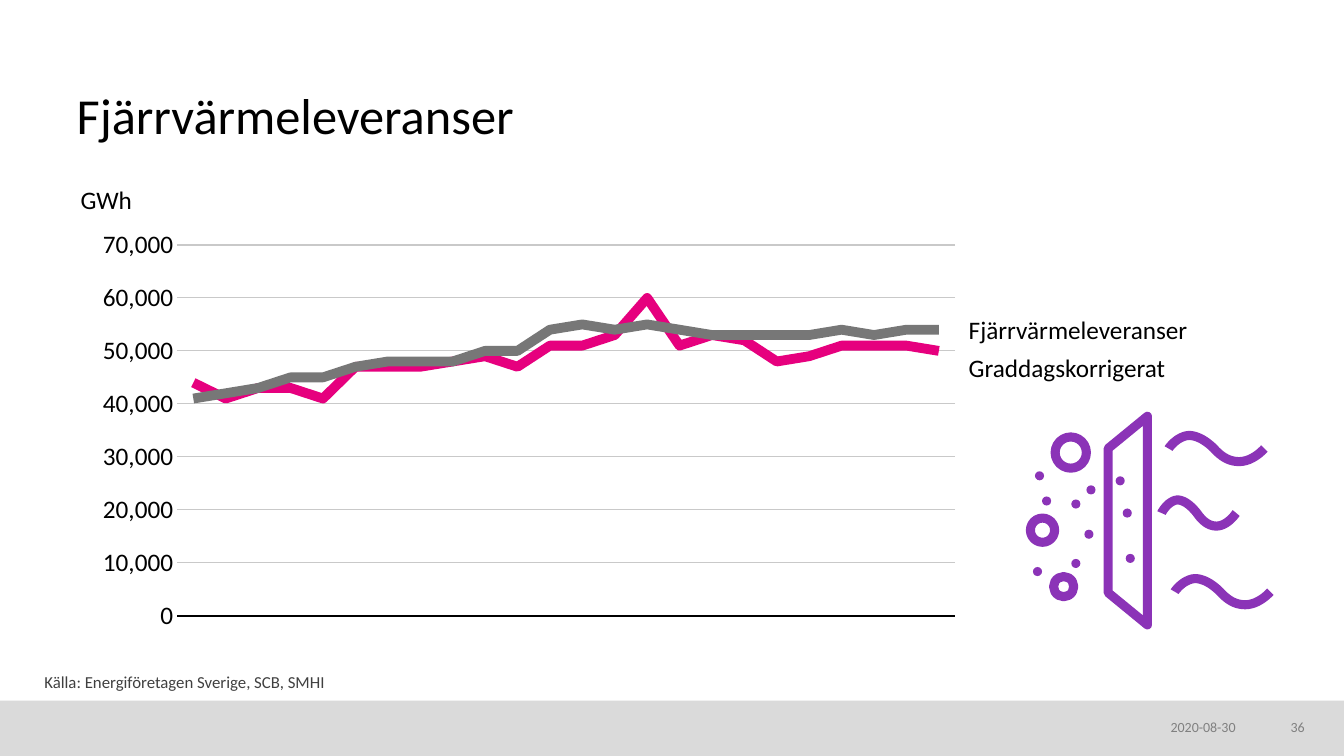
from dataclasses import dataclass

from lxml import etree
from pptx import Presentation
from pptx.chart.data import CategoryChartData
from pptx.dml.color import RGBColor
from pptx.enum.chart import XL_CHART_TYPE, XL_TICK_LABEL_POSITION, XL_TICK_MARK
from pptx.enum.shapes import MSO_SHAPE
from pptx.enum.text import MSO_ANCHOR, PP_ALIGN
from pptx.oxml import parse_xml
from pptx.oxml.ns import nsdecls, qn
from pptx.util import Inches, Pt

TITLE_ONLY = 5
NO_TICKS = XL_TICK_MARK.NONE
NO_LABELS = XL_TICK_LABEL_POSITION.NONE
LINE_CHART = XL_CHART_TYPE.LINE
OVAL, RECTANGLE = MSO_SHAPE.OVAL, MSO_SHAPE.RECTANGLE
TOP, MIDDLE, BOTTOM = MSO_ANCHOR.TOP, MSO_ANCHOR.MIDDLE, MSO_ANCHOR.BOTTOM
LEFT, RIGHT = PP_ALIGN.LEFT, PP_ALIGN.RIGHT


@dataclass(frozen=True)
class Theme:
    font: str = "Calibri"
    black: RGBColor = RGBColor(0x00, 0x00, 0x00)
    source: RGBColor = RGBColor(0x40, 0x40, 0x40)
    footer: RGBColor = RGBColor(0x80, 0x80, 0x80)
    band: RGBColor = RGBColor(0xDA, 0xDA, 0xDA)
    grid: RGBColor = RGBColor(0xC9, 0xC9, 0xC9)
    delivered: RGBColor = RGBColor(0xE6, 0x00, 0x7E)
    corrected: RGBColor = RGBColor(0x77, 0x77, 0x77)
    icon: RGBColor = RGBColor(0x8B, 0x33, 0xB7)
    title_size: Pt = Pt(36)
    label_size: Pt = Pt(18)
    source_size: Pt = Pt(12)
    footer_size: Pt = Pt(10)
    series_line: Pt = Pt(7)
    icon_line: Pt = Pt(6.5)


THEME = Theme()

DELIVERED = [44000, 41000, 43000, 43000, 41000, 47000, 47000, 47000,
             48000, 49000, 47000, 51000, 51000, 53000, 60000, 51000,
             53000, 52000, 48000, 49000, 51000, 51000, 51000, 50000]
CORRECTED = [41000, 42000, 43000, 45000, 45000, 47000, 48000, 48000,
             48000, 50000, 50000, 54000, 55000, 54000, 55000, 54000,
             53000, 53000, 53000, 53000, 54000, 53000, 54000, 54000]
PLOT_AREA = {"x": 0.108, "y": 0.153, "w": 0.633, "h": 0.749}

# Icon geometry in inches: circles are centre x, centre y, diameter.
RINGS = [(10.62, 4.49, 0.31), (10.34, 5.26, 0.24), (10.55, 5.82, 0.2)]
DOT_DIAMETER = 0.09
DOTS = [(10.67, 5), (11.18, 5.09), (11.21, 5.54), (10.67, 5.59),
        (10.38, 4.97), (10.31, 4.72), (10.29, 5.67), (10.8, 5.3),
        (11.11, 4.77), (10.82, 4.86)]
PANEL = [(10.99, 4.45), (11.38, 4.13), (11.38, 6.2), (10.99, 5.88)]
# Bézier curves relative to the wave's start: three control points each.
WAVE = [((0, 0), (0.08, -0.12), (0.2, -0.13)),
        ((0.28, -0.13), (0.37, -0.08), (0.45, 0)),
        ((0.53, 0.09), (0.61, 0.13), (0.7, 0.13)),
        ((0.84, 0.13), (0.95, 0), (0.95, 0))]
WAVE_PLACES = [(11.59, 4.45, 1), (11.65, 5.87, 1), (11.52, 5.09, 0.78)]
CURVE_STEPS = 12


def format_text(frame, text, size, color, anchor, align, spacing):
    frame.text = text
    frame.word_wrap = True
    frame.vertical_anchor = anchor
    paragraph = frame.paragraphs[0]
    paragraph.alignment = align
    paragraph.line_spacing = spacing
    font = paragraph.runs[0].font
    font.name, font.size, font.color.rgb = THEME.font, size, color


def clear_margins(frame):
    frame.margin_left = frame.margin_right = 0
    frame.margin_top = frame.margin_bottom = 0


def add_title(slide, text):
    title = slide.shapes.title
    title.left, title.top = Inches(0.76), Inches(0.37)
    title.width, title.height = Inches(11.87), Inches(1.07)
    clear_margins(title.text_frame)
    format_text(title.text_frame, text, THEME.title_size, THEME.black,
                BOTTOM, LEFT, 0.85)


def add_label(slide, text, box, size=THEME.label_size, color=THEME.black,
              anchor=TOP, align=LEFT, spacing=0.9, margins=True):
    frame = slide.shapes.add_textbox(*map(Inches, box)).text_frame
    if not margins:
        clear_margins(frame)
    format_text(frame, text, size, color, anchor, align, spacing)


def add_footer_band(slide):
    band = slide.shapes.add_shape(RECTANGLE, 0, Inches(6.95), Inches(13.33), Inches(0.55))
    band.shadow.inherit = False
    band.fill.solid()
    band.fill.fore_color.rgb = THEME.band
    band.line.fill.background()


def place_plot_area(chart):
    """Pin the inner plot area to fixed fractions of the chart."""
    layout = parse_xml(f'<c:layout {nsdecls("c")}><c:manualLayout/></c:layout>')
    manual = layout[0]
    settings = {"layoutTarget": "inner", "xMode": "edge", "yMode": "edge", **PLOT_AREA}
    for tag, value in settings.items():
        etree.SubElement(manual, qn(f"c:{tag}")).set("val", str(value))
    plot_area = chart.plots[0]._element.getparent()
    for old in plot_area.findall(qn("c:layout")):
        plot_area.remove(old)
    plot_area.insert(0, layout)


def add_delivery_chart(slide):
    data = CategoryChartData(number_format="#,##0")
    data.categories = [""] * len(DELIVERED)
    data.add_series("Fjärrvärmeleveranser", DELIVERED)
    data.add_series("Graddagskorrigerat", CORRECTED)
    box = map(Inches, (0.44, 1.68, 12.19, 4.91))
    chart = slide.shapes.add_chart(LINE_CHART, *box, data).chart
    chart.has_title = chart.has_legend = False
    chart.font.name, chart.font.size = THEME.font, THEME.label_size
    chart.font.color.rgb = THEME.black
    place_plot_area(chart)
    chart.plots[0].vary_by_categories = False
    for series, color in zip(chart.plots[0].series, (THEME.delivered, THEME.corrected)):
        series.smooth = False
        series.format.line.color.rgb = color
        series.format.line.width = THEME.series_line

    baseline, energy = chart.category_axis, chart.value_axis
    for axis in (baseline, energy):
        axis.major_tick_mark = axis.minor_tick_mark = NO_TICKS
    baseline.tick_label_position = NO_LABELS
    baseline.format.line.color.rgb = THEME.black
    baseline.format.line.width = Pt(1.5)
    energy.minimum_scale, energy.maximum_scale, energy.major_unit = 0, 70000, 10000
    energy.tick_labels.number_format = "#,##0"
    energy.tick_labels.number_format_is_linked = False
    energy.format.line.fill.background()
    energy.major_gridlines.format.line.color.rgb = THEME.grid
    energy.major_gridlines.format.line.width = Pt(0.75)


def style_outline(shape):
    shape.shadow.inherit = False
    shape.fill.background()
    shape.line.color.rgb = THEME.icon
    shape.line.width = THEME.icon_line
    etree.SubElement(shape.line._get_or_add_ln(), qn("a:round"))


def add_circle(icon, x, y, diameter):
    radius = diameter / 2
    box = (x - radius, y - radius, diameter, diameter)
    return icon.shapes.add_shape(OVAL, *map(Inches, box))


def add_dot(icon, x, y):
    dot = add_circle(icon, x, y, DOT_DIAMETER)
    dot.shadow.inherit = False
    dot.fill.solid()
    dot.fill.fore_color.rgb = THEME.icon
    dot.line.fill.background()


def add_outline(icon, points, close):
    start, *rest = [(Inches(x), Inches(y)) for x, y in points]
    builder = icon.shapes.build_freeform(*start)
    builder.add_line_segments(rest, close=close)
    style_outline(builder.convert_to_shape())


def wave_points(left, top, stretch):
    """Sample the wave's curves, stretched sideways from its start."""
    start, points = (0, 0), [(0, 0)]
    for first, second, end in WAVE:
        for step in range(1, CURVE_STEPS + 1):
            t = step / CURVE_STEPS
            weights = ((1 - t) ** 3, 3 * t * (1 - t) ** 2, 3 * t ** 2 * (1 - t), t ** 3)
            controls = zip(start, first, second, end)
            points.append(tuple(sum(w * c for w, c in zip(weights, axis)) for axis in controls))
        start = end
    return [(left + stretch * x, top + y) for x, y in points]


def add_heat_icon(slide):
    icon = slide.shapes.add_group_shape()
    add_outline(icon, PANEL, close=True)
    for ring in RINGS:
        style_outline(add_circle(icon, *ring))
    for dot in DOTS:
        add_dot(icon, *dot)
    for place in WAVE_PLACES:
        add_outline(icon, wave_points(*place), close=False)


def main():
    deck = Presentation()
    deck.slide_width, deck.slide_height = Inches(13.33), Inches(7.5)
    slide = deck.slides.add_slide(deck.slide_layouts[TITLE_ONLY])
    add_footer_band(slide)
    add_title(slide, "Fjärrvärmeleveranser")
    add_delivery_chart(slide)
    add_label(slide, "GWh", (0.7, 1.81, 1.19, 0.37))
    add_label(slide, "Fjärrvärmeleveranser", (9.51, 3.1, 2.5, 0.37))
    add_label(slide, "Graddagskorrigerat", (9.51, 3.48, 2.5, 0.37))
    add_heat_icon(slide)
    add_label(slide, "Källa: Energiföretagen Sverige, SCB, SMHI", (0.44, 6.66, 4.86, 0.23),
              THEME.source_size, THEME.source, anchor=MIDDLE, margins=False)
    for text, box, align in (("2020-08-30", (11.61, 7.13, 0.74, 0.19), LEFT),
                             ("36", (12.55, 7.13, 0.39, 0.19), RIGHT)):
        add_label(slide, text, box, THEME.footer_size, THEME.footer,
                  align=align, spacing=1.0, margins=False)
    deck.save("out.pptx")


if __name__ == "__main__":
    main()
